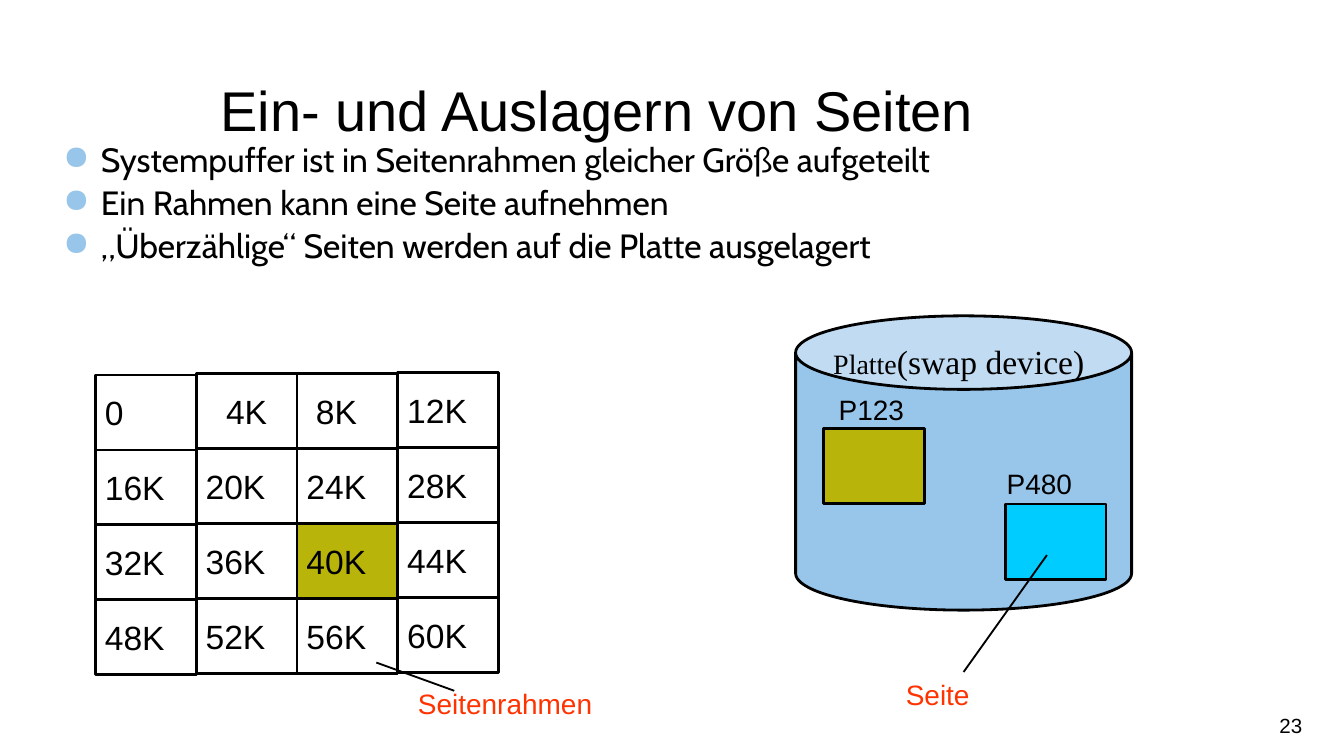
from dataclasses import dataclass
from typing import Optional

from lxml.etree import SubElement
from pptx import Presentation
from pptx.dml.color import RGBColor
from pptx.enum.shapes import MSO_CONNECTOR, MSO_SHAPE
from pptx.enum.text import MSO_ANCHOR, PP_ALIGN
from pptx.oxml.ns import qn
from pptx.util import Inches, Pt

COLUMNS, ROWS = 100, 56.25
WIDTH, HEIGHT = Inches(10), Inches(5.625)
BLACK, RED, BLUE, OLIVE, CYAN = "000000", "FF3300", "98C6EA", "B8B40A", "00CCFF"
MARGINS = (0.7, 0.4, 0.7, 0.4)
FRAME_WIDTH, FRAME_HEIGHT, FRAME_LEFT = 7.5, 5.58, 7.1
FRAME_TOPS = (27.9, 27.8, 27.8, 27.7)
SWAPPED_FRAME = 10
BULLETS = (
    "Systempuffer ist in Seitenrahmen gleicher Größe aufgeteilt",
    "Ein Rahmen kann eine Seite aufnehmen",
    "„Überzählige“ Seiten werden auf die Platte ausgelagert",
)


@dataclass(frozen=True)
class Area:
    """A place on the slide in grid columns and rows."""
    left: float
    top: float
    width: float
    height: float

    def lengths(self) -> tuple:
        return across(self.left), down(self.top), across(self.width), down(self.height)


@dataclass(frozen=True)
class Run:
    """A piece of text with its font."""
    text: str
    size: float
    name: str = "Arial"
    color: str = BLACK


@dataclass(frozen=True)
class Label:
    """A text box with one paragraph."""
    area: Area
    runs: tuple
    align: PP_ALIGN = PP_ALIGN.LEFT
    anchor: MSO_ANCHOR = MSO_ANCHOR.TOP
    margins: tuple = MARGINS
    wrap: bool = True
    line_spacing: float = 1.0


@dataclass(frozen=True)
class Block:
    """An outlined shape."""
    kind: MSO_SHAPE
    area: Area
    fill: Optional[str] = None


@dataclass(frozen=True)
class Pointer:
    """A thin straight line between two grid points."""
    start: tuple
    end: tuple


def across(columns: float) -> int:
    """Convert grid columns to a length."""
    return round(WIDTH * columns / COLUMNS)


def down(rows: float) -> int:
    """Convert grid rows to a length."""
    return round(HEIGHT * rows / ROWS)


def color(value: str) -> RGBColor:
    """Turn a hex string into a colour."""
    return RGBColor.from_string(value)


def apply_format(target, values: dict) -> None:
    """Set every attribute of a format."""
    for name, value in values.items():
        setattr(target, name, value)


def format_frame(frame, margins: tuple, anchor: MSO_ANCHOR, wrap: bool) -> None:
    """Set insets, anchor and wrapping of a text frame."""
    left, top, right, bottom = margins
    apply_format(frame, {
        "margin_left": across(left), "margin_top": down(top),
        "margin_right": across(right), "margin_bottom": down(bottom),
        "vertical_anchor": anchor, "word_wrap": wrap,
    })


def add_run(paragraph, piece: Run) -> None:
    """Append a formatted run to a paragraph."""
    run = paragraph.add_run()
    run.text = piece.text
    apply_format(run.font, {"size": Pt(piece.size), "name": piece.name})
    run.font.color.rgb = color(piece.color)


def draw_label(slide, label: Label) -> None:
    """Draw a one-paragraph text box."""
    frame = slide.shapes.add_textbox(*label.area.lengths()).text_frame
    format_frame(frame, label.margins, label.anchor, label.wrap)
    paragraph = frame.paragraphs[0]
    apply_format(paragraph, {"alignment": label.align, "line_spacing": label.line_spacing})
    for piece in label.runs:
        add_run(paragraph, piece)


def draw_bullets(slide, area: Area, lines: tuple) -> None:
    """Draw the bulleted list."""
    frame = slide.shapes.add_textbox(*area.lengths()).text_frame
    format_frame(frame, MARGINS, MSO_ANCHOR.TOP, True)
    for index, line in enumerate(lines):
        paragraph = frame.add_paragraph() if index else frame.paragraphs[0]
        apply_format(paragraph, {"line_spacing": 0.9, "space_before": Pt(3.6 if index else 0)})
        properties = paragraph._p.get_or_add_pPr()
        properties.set("marL", str(across(2.8)))
        properties.set("indent", str(-across(2.8)))
        bullet_color = SubElement(properties, qn("a:buClr"))
        SubElement(bullet_color, qn("a:srgbClr"), val=BLUE)
        SubElement(properties, qn("a:buChar"), char="●")
        add_run(paragraph, Run(line, 18, "Cabin"))


def draw_block(slide, block: Block):
    """Draw an outlined shape and return it."""
    shape = slide.shapes.add_shape(block.kind, *block.area.lengths())
    shape.shadow.inherit = False
    if block.fill:
        shape.fill.solid()
        shape.fill.fore_color.rgb = color(block.fill)
    else:
        shape.fill.background()
    shape.line.color.rgb = color(BLACK)
    shape.line.width = Pt(1.5)
    return shape


def draw_frame(slide, index: int) -> None:
    """Draw one page frame of the four by four buffer."""
    row, column = divmod(index, 4)
    area = Area(FRAME_LEFT + column * FRAME_WIDTH, FRAME_TOPS[column] + row * FRAME_HEIGHT,
                FRAME_WIDTH, FRAME_HEIGHT)
    fill = OLIVE if index == SWAPPED_FRAME else None
    shape = draw_block(slide, Block(MSO_SHAPE.RECTANGLE, area, fill))
    margins = (1.4, *MARGINS[1:]) if index == 2 else MARGINS
    format_frame(shape.text_frame, margins, MSO_ANCHOR.MIDDLE, True)
    paragraph = shape.text_frame.paragraphs[0]
    paragraph.alignment = PP_ALIGN.CENTER if index == 1 else PP_ALIGN.LEFT
    add_run(paragraph, Run(f"{index * 4}K" if index else "0", 18))


def draw_pointer(slide, pointer: Pointer) -> None:
    """Draw a thin line without a shadow."""
    (x1, y1), (x2, y2) = pointer.start, pointer.end
    connector = slide.shapes.add_connector(
        MSO_CONNECTOR.STRAIGHT, across(x1), down(y1), across(x2), down(y2))
    connector.line.color.rgb = color(BLACK)
    connector.line.width = Pt(1)
    SubElement(connector._element.spPr, qn("a:effectLst"))


def main() -> None:
    """Build and save the slide."""
    presentation = Presentation()
    apply_format(presentation, {"slide_width": WIDTH, "slide_height": HEIGHT})
    slide = presentation.slides.add_slide(presentation.slide_layouts[6])

    draw_label(slide, Label(Area(14.8, 3.4, 71, 5), (Run("Ein- und Auslagern von Seiten", 30),),
                            margins=(1.6, 1, 1, 0.5), line_spacing=1.25))
    draw_bullets(slide, Area(4, 10.3, 72.5, 13.6), BULLETS)

    for block in (Block(MSO_SHAPE.CAN, Area(59.2, 23.5, 25, 21.9), BLUE),
                  Block(MSO_SHAPE.RECTANGLE, Area(61.3, 31.9, 7.5, 5.6), OLIVE),
                  Block(MSO_SHAPE.RECTANGLE, Area(74.8, 37.5, 7.5, 5.6), CYAN)):
        draw_block(slide, block)

    justify = PP_ALIGN.JUSTIFY
    for label in (
        Label(Area(59.2, 25, 25, 3.8), (Run("Platte", 15, "Times New Roman"),
                                        Run("(swap device)", 18, "Times New Roman")),
              margins=(2.8, *MARGINS[1:])),
        Label(Area(74.2, 34.3, 8.1, 3.3), (Run("P480", 15),), justify),
        Label(Area(61.7, 28.8, 8.1, 3.3), (Run("P123", 15),), justify),
        Label(Area(30.4, 50.7, 14.6, 3.3), (Run("Seitenrahmen", 15, color=RED),), justify, wrap=False),
        Label(Area(66.7, 50, 6.3, 3.3), (Run("Seite", 15, color=RED),), justify, wrap=False),
        Label(Area(74.5, 52.5, 22.4, 3), (Run("23", 11),), PP_ALIGN.RIGHT, MSO_ANCHOR.MIDDLE,
              (0, 0.5, 0, 0.5)),
    ):
        draw_label(slide, label)

    for index in sorted(range(16), key=lambda number: number == SWAPPED_FRAME):
        draw_frame(slide, index)
    for pointer in (Pointer((71.7, 50), (77.9, 41.3)), Pointer((33.8, 51.4), (28, 49.3))):
        draw_pointer(slide, pointer)

    presentation.save("out.pptx")


if __name__ == "__main__":
    main()
